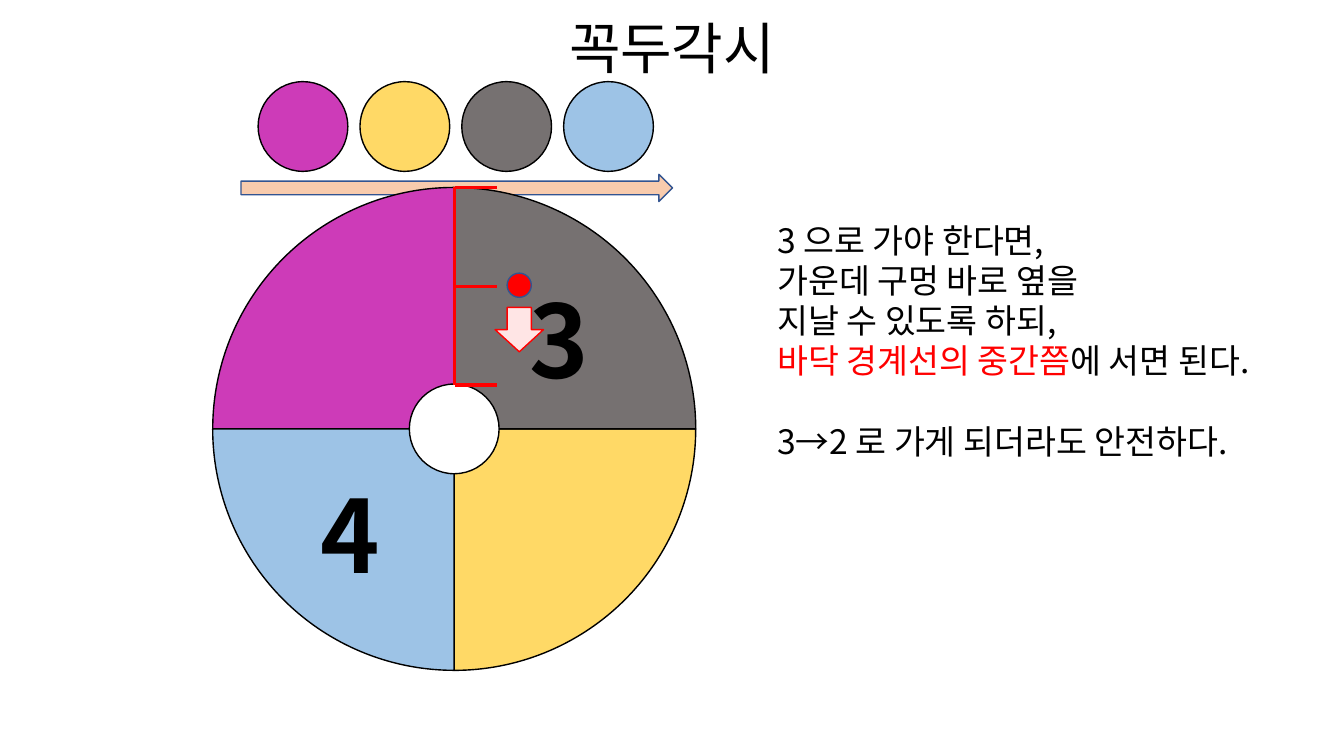
from lxml import etree
from pptx import Presentation
from pptx.dml.color import RGBColor
from pptx.enum.shapes import MSO_CONNECTOR, MSO_SHAPE
from pptx.enum.text import MSO_ANCHOR, MSO_AUTO_SIZE, PP_ALIGN
from pptx.oxml import parse_xml
from pptx.oxml.ns import nsdecls, qn
from pptx.util import Inches, Pt

FONT = "Noto Sans CJK KR"
BLACK = RGBColor(0x00, 0x00, 0x00)
WHITE = RGBColor(0xFF, 0xFF, 0xFF)
RED = RGBColor(0xFF, 0x00, 0x00)
PINK = RGBColor(0xFF, 0xE5, 0xE5)
PEACH = RGBColor(0xF8, 0xCB, 0xAD)
NAVY = RGBColor(0x32, 0x54, 0x91)
MAGENTA = RGBColor(0xCD, 0x3B, 0xB8)
YELLOW = RGBColor(0xFF, 0xD9, 0x66)
GRAY = RGBColor(0x76, 0x71, 0x71)
BLUE = RGBColor(0x9D, 0xC3, 0xE6)

NOTES = [
    [("3 으로 가야 한다면,", BLACK)],
    [("가운데 구멍 바로 옆을", BLACK)],
    [("지날 수 있도록 하되,", BLACK)],
    [("바닥 경계선의 중간쯤", RED), ("에 서면 된다.", BLACK)],
    [("3→2 로 가게 되더라도 안전하다.", BLACK)],
]


def add_filled(slide, preset, left, top, width, height, fill, line=BLACK):
    shape = slide.shapes.add_shape(
        preset, Inches(left), Inches(top), Inches(width), Inches(height))
    shape.shadow.inherit = False
    shape.fill.solid()
    shape.fill.fore_color.rgb = fill
    shape.line.color.rgb = line
    shape.line.width = Pt(1)
    return shape


def add_red_line(slide, start_x, start_y, end_x, end_y):
    line = slide.shapes.add_connector(
        MSO_CONNECTOR.STRAIGHT, Inches(start_x), Inches(start_y),
        Inches(end_x), Inches(end_y))
    line.line.color.rgb = RED
    line.line.width = Pt(2.25)
    etree.SubElement(line._element.spPr, qn("a:effectLst"))


def format_run(run, size, color, bold=False):
    run.font.name = FONT
    run.font.size = Pt(size)
    run.font.bold = bold
    run.font.color.rgb = color
    east_asian = etree.SubElement(run._r.get_or_add_rPr(), qn("a:ea"))
    east_asian.set("typeface", FONT)


def format_frame(shape, size, alignment):
    """Set lines 1.2 times the text size, with the first baseline kept low."""
    frame = shape.text_frame
    frame.word_wrap = True
    frame.auto_size = MSO_AUTO_SIZE.NONE
    frame.vertical_anchor = MSO_ANCHOR.TOP
    frame.margin_top = Pt(3.6 + size * 0.08)
    frame.margin_bottom = 0
    for paragraph in frame.paragraphs:
        paragraph.alignment = alignment
        paragraph.line_spacing = Pt(size * 1.2)


def add_title(slide, left, top, width, height):
    title = slide.shapes.title
    title.left, title.top = Inches(left), Inches(top)
    title.width, title.height = Inches(width), Inches(height)
    title.text_frame.text = "꼭두각시"
    format_frame(title, 40, PP_ALIGN.CENTER)
    format_run(title.text_frame.paragraphs[0].runs[0], 40, BLACK)


def add_color_order(slide, left, top, diameter, pitch):
    for index, color in enumerate((MAGENTA, YELLOW, GRAY, BLUE)):
        add_filled(slide, MSO_SHAPE.OVAL, left + index * pitch, top,
                   diameter, diameter, color)


def add_wheel(slide, left, top, diameter, hole):
    # Quarters, each turned from the upper left one
    quarters = ((MAGENTA, 0), (YELLOW, 180), (GRAY, 90), (BLUE, 270))
    for color, rotation in quarters:
        quarter = add_filled(slide, MSO_SHAPE.PIE, left, top,
                             diameter, diameter, color)
        quarter.adjustments[0] = 108
        quarter.adjustments[1] = 162
        quarter.rotation = rotation
    # Hole in the middle
    inset = (diameter - hole) / 2
    add_filled(slide, MSO_SHAPE.OVAL, left + inset, top + inset,
               hole, hole, WHITE)


def add_number(slide, text, left, top, width=0.79, height=1.31):
    box = slide.shapes.add_textbox(
        Inches(left), Inches(top), Inches(width), Inches(height))
    box.text_frame.text = text
    format_frame(box, 72, PP_ALIGN.CENTER)
    run = box.text_frame.paragraphs[0].runs[0]
    format_run(run, 72, BLACK, bold=True)
    # Thin white outline of the digit
    run._r.get_or_add_rPr().insert(0, parse_xml(
        f'<a:ln {nsdecls("a")} w="9525"><a:solidFill>'
        '<a:srgbClr val="FFFFFF"/></a:solidFill></a:ln>'))


def add_notes_text(slide, left, top, width, height):
    box = slide.shapes.add_textbox(
        Inches(left), Inches(top), Inches(width), Inches(height))
    frame = box.text_frame
    for index, parts in enumerate(NOTES):
        paragraph = frame.add_paragraph() if index else frame.paragraphs[0]
        for text, color in parts:
            run = paragraph.add_run()
            run.text = text
            format_run(run, 24, color)
    format_frame(box, 24, PP_ALIGN.LEFT)
    frame.paragraphs[-1].space_before = Pt(28.8)


def add_marker(slide, left, top):
    add_filled(slide, MSO_SHAPE.OVAL, left + 0.12, top, 0.24, 0.24, RED, NAVY)
    arrow = add_filled(slide, MSO_SHAPE.UP_ARROW, left, top + 0.34,
                       0.48, 0.44, PINK, RED)
    arrow.rotation = 180


def add_bracket(slide, left, top, width, height):
    add_red_line(slide, left, top + height, left, top)
    for step in range(3):
        tick_y = top + step * height / 2
        add_red_line(slide, left, tick_y, left + width, tick_y)


def main():
    presentation = Presentation()
    presentation.slide_width = Inches(13.33)
    presentation.slide_height = Inches(7.5)
    slide = presentation.slides.add_slide(presentation.slide_layouts[5])

    # Direction arrow behind the wheel
    add_filled(slide, MSO_SHAPE.RIGHT_ARROW, 2.39, 1.73, 4.28, 0.27,
               PEACH, NAVY)
    add_wheel(slide, 2.11, 1.86, 4.79, 0.89)
    add_color_order(slide, 2.56, 0.81, 0.89, 1.01)

    # Texts
    add_notes_text(slide, 7.61, 2.1, 5.65, 2.52)
    add_title(slide, 5.44, 0.04, 2.45, 0.77)
    add_number(slide, "3", 5.15, 2.63)
    add_number(slide, "4", 3.08, 4.56)

    # Standing point and the measured border
    add_marker(slide, 4.91, 2.71)
    add_bracket(slide, 4.51, 1.86, 0.42, 1.96)

    presentation.save("out.pptx")


if __name__ == "__main__":
    main()
